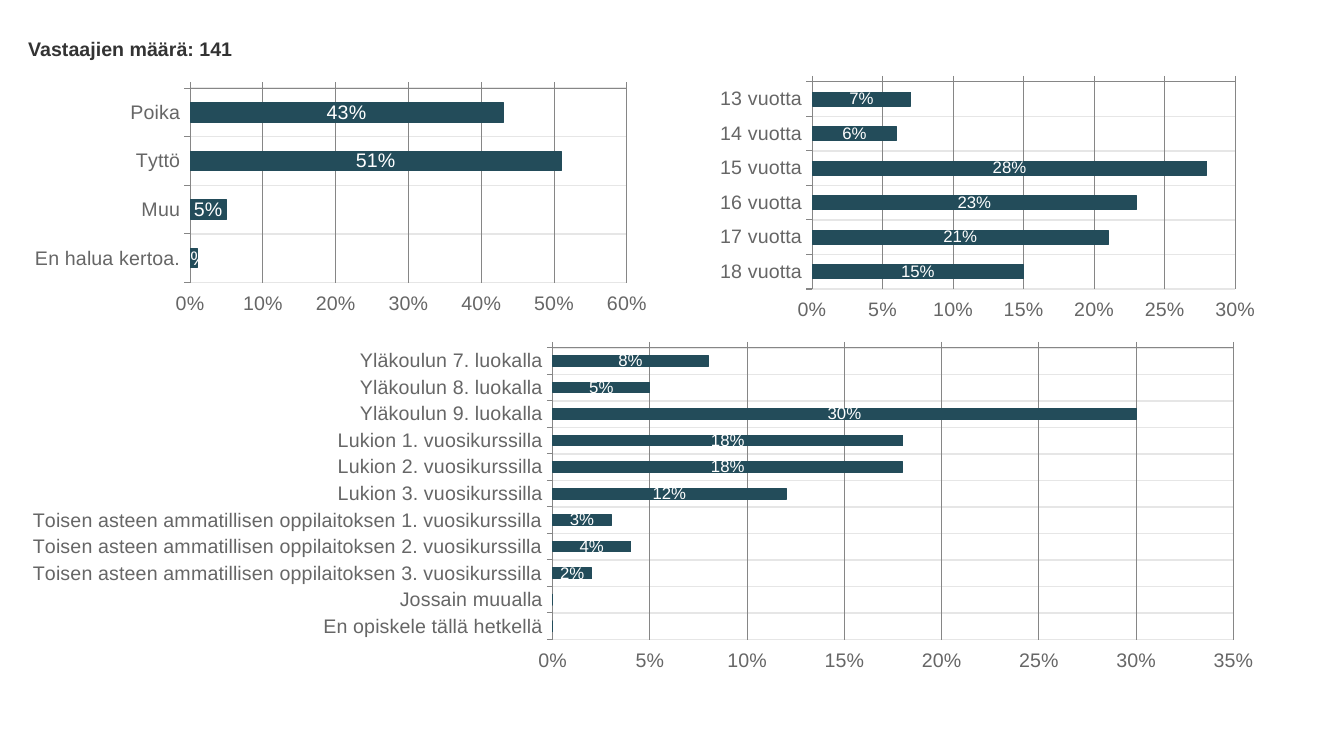
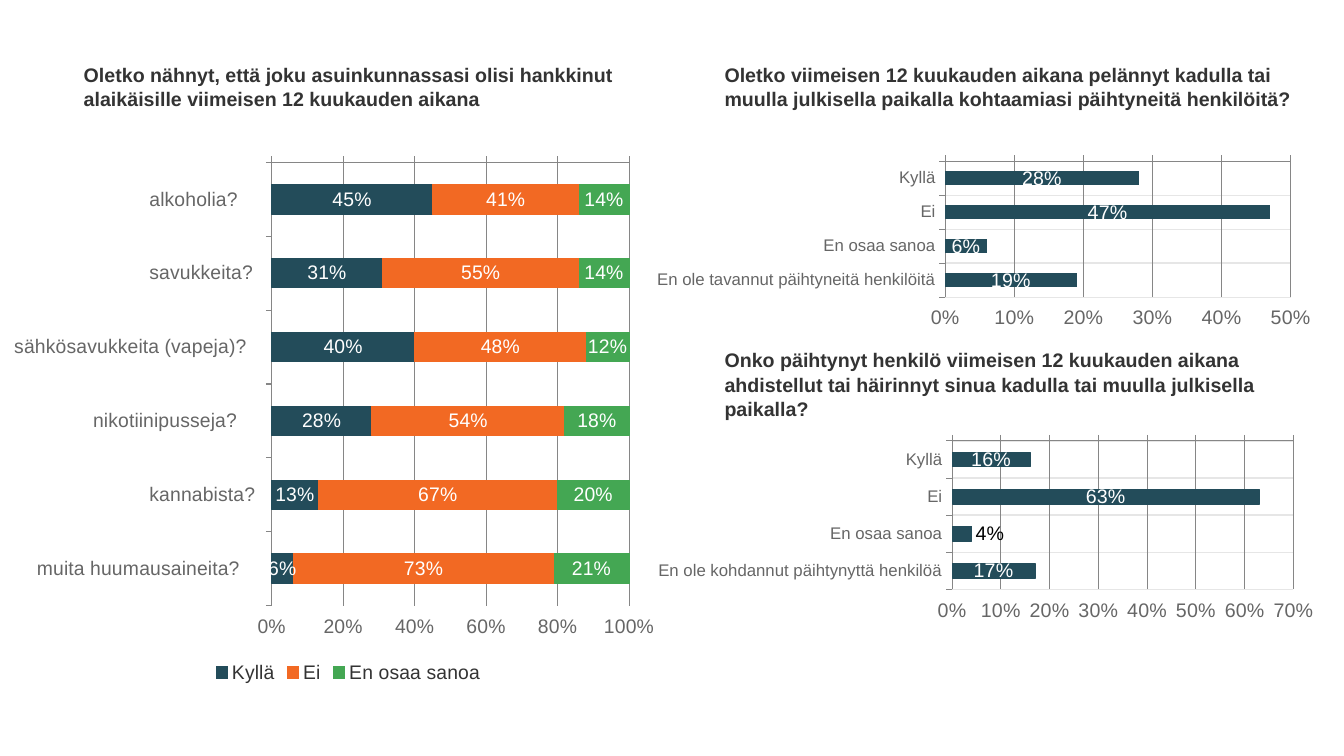
import lxml.etree
import pptx
import pptx.chart.data
import pptx.dml.color
import pptx.enum.chart
import pptx.enum.text
import pptx.oxml.ns
import pptx.util

Cm, Pt = pptx.util.Cm, pptx.util.Pt
KIND = pptx.enum.chart.XL_CHART_TYPE
TICK = pptx.enum.chart.XL_TICK_LABEL_POSITION
SPOT = pptx.enum.chart.XL_LABEL_POSITION

# Shared look
FONT = "Arial"
DARK, GREY = "333333", "666666"
RULE, PALE = "868686", "E6E6E6"
FILLS = ["234C5A", "F26923", "44A753"]


def paint(text):
    return pptx.dml.color.RGBColor.from_string(text)


def style(font, size, color, bold=False):
    font.name, font.size, font.bold = FONT, Pt(size), bold
    font.color.rgb = paint(color)


def stroke(line, color, width=0.75):
    line.color.rgb = paint(color)
    line.width = Pt(width)


def head(slide, box, text):
    """Bold heading; the first one on a slide takes the title placeholder."""
    title = slide.shapes.title
    lengths = [Cm(n) for n in box]
    if title.has_text_frame and not title.text_frame.text:
        shape = title
        shape.left, shape.top, shape.width, shape.height = lengths
    else:
        shape = slide.shapes.add_textbox(*lengths)
    frame = shape.text_frame
    frame.text = text
    frame.word_wrap = True
    frame.auto_size = pptx.enum.text.MSO_AUTO_SIZE.NONE
    frame.vertical_anchor = pptx.enum.text.MSO_ANCHOR.TOP
    frame.margin_left = frame.margin_right = 0
    frame.margin_top = frame.margin_bottom = 0
    para = frame.paragraphs[0]
    para.alignment = pptx.enum.text.PP_ALIGN.LEFT
    para.line_spacing = 1.05
    style(para.runs[0].font, 14, DARK, True)


def place(chart, plot):
    """Fix the inner plot area as shares of the chart: x, y, w, h."""
    qn = pptx.oxml.ns.qn
    area = chart._chartSpace.find(".//" + qn("c:plotArea"))
    for old in area.findall(qn("c:layout")):
        area.remove(old)
    layout = lxml.etree.Element(qn("c:layout"))
    area.insert(0, layout)
    manual = lxml.etree.SubElement(layout, qn("c:manualLayout"))
    parts = [("layoutTarget", "inner"), ("xMode", "edge"), ("yMode", "edge")]
    for tag, value in parts + list(zip("xywh", plot)):
        lxml.etree.SubElement(manual, qn("c:" + tag)).set("val", str(value))


def bars(slide, box, plot, cats, rows, top, step, size=14, label=14):
    """Horizontal bars; several rows are stacked and get a legend."""
    stacked = len(rows) > 1
    data = pptx.chart.data.CategoryChartData(number_format="0%")
    data.categories = cats
    for name, vals in rows.items():
        data.add_series(name, [n / 100 for n in vals])
    kind = KIND.BAR_STACKED if stacked else KIND.BAR_CLUSTERED
    chart = slide.shapes.add_chart(kind, *[Cm(n) for n in box], data).chart
    style(chart.font, 14, DARK)
    chart.has_title = False
    place(chart, plot)

    # Axes: first category on top, percentages along the bottom
    cat, val = chart.category_axis, chart.value_axis
    cat.reverse_order = True
    cat.tick_label_position = TICK.LOW
    val.tick_label_position = TICK.HIGH
    val.minimum_scale, val.maximum_scale, val.major_unit = 0, top, step
    val.tick_labels.number_format = "0%"
    val.tick_labels.number_format_is_linked = False
    for axis, points in ((cat, size), (val, 14)):
        axis.major_tick_mark = pptx.enum.chart.XL_TICK_MARK.OUTSIDE
        style(axis.tick_labels.font, points, GREY)
        stroke(axis.format.line, RULE)
    val.has_major_gridlines = True
    stroke(val.major_gridlines.format.line, RULE)
    cat.has_major_gridlines = not stacked
    if not stacked:
        stroke(cat.major_gridlines.format.line, PALE, 1)

    # Bars and their labels; zeros stay unlabelled
    group = chart.plots[0]
    group.gap_width = 150
    group.vary_by_categories = False
    for row, fill in zip(group.series, FILLS):
        row.format.fill.solid()
        row.format.fill.fore_color.rgb = paint(fill)
        stroke(row.format.line, fill)
        tags = row.data_labels
        tags.show_value = True
        tags.number_format = "0%;;"
        tags.number_format_is_linked = False
        tags.position = SPOT.CENTER
        style(tags.font, label, "FFFFFF")

    chart.has_legend = stacked
    if stacked:
        chart.legend.position = pptx.enum.chart.XL_LEGEND_POSITION.BOTTOM
        chart.legend.include_in_layout = False
        style(chart.legend.font, 14, DARK)
    return chart


def people(slide):
    """Respondents by gender, age and school year."""
    head(slide, (0.71, 0.91, 32.46, 0.58), "Vastaajien määrä: 141")
    bars(slide, (0.53, 1.73, 16.21, 6.3), (0.263, 0.078, 0.679, 0.778),
         ["Poika", "Tyttö", "Muu", "En halua kertoa."],
         {"Series 1": [43, 51, 5, 1]}, 0.6, 0.1)
    bars(slide, (17.15, 1.9, 14.81, 6.3), (0.224, 0.022, 0.72, 0.832),
         [f"{age} vuotta" for age in range(13, 19)],
         {"Series 1": [7, 6, 28, 23, 21, 15]}, 0.3, 0.05, label=12)
    years = range(1, 4)
    trade = "Toisen asteen ammatillisen oppilaitoksen"
    grades = ([f"Yläkoulun {n}. luokalla" for n in range(7, 10)]
              + [f"Lukion {n}. vuosikurssilla" for n in years]
              + [f"{trade} {n}. vuosikurssilla" for n in years]
              + ["Jossain muualla", "En opiskele tällä hetkellä"])
    bars(slide, (0.64, 8.41, 31.42, 8.71), (0.423, 0.041, 0.546, 0.844),
         grades, {"Series 1": [8, 5, 30, 18, 18, 12, 3, 4, 2, 0, 0]},
         0.35, 0.05, label=12)


def street(slide):
    """Supply to minors on the left, street safety on the right."""
    head(slide, (2.11, 1.55, 15.32, 1.19),
         "Oletko nähnyt, että joku asuinkunnassasi olisi hankkinut "
         "alaikäisille viimeisen 12 kuukauden aikana")
    goods = ["alkoholia", "savukkeita", "sähkösavukkeita (vapeja)",
             "nikotiinipusseja", "kannabista", "muita huumausaineita"]
    bars(slide, (0.36, 3.71, 16.59, 13.61), (0.382, 0.028, 0.551, 0.821),
         [f"{item}?\t" for item in goods],
         {"Kyllä": [45, 31, 40, 28, 13, 6],
          "Ei": [41, 55, 48, 54, 67, 73],
          "En osaa sanoa": [14, 14, 12, 18, 20, 21]}, 1, 0.2)

    replies = ["Kyllä", "Ei", "En osaa sanoa"]
    head(slide, (18.26, 1.55, 14.96, 1.19),
         "Oletko viimeisen 12 kuukauden aikana pelännyt kadulla tai "
         "muulla julkisella paikalla kohtaamiasi päihtyneitä henkilöitä?")
    bars(slide, (16.05, 3.71, 17.2, 4.9), (0.452, 0.072, 0.506, 0.7),
         replies + ["En ole tavannut päihtyneitä henkilöitä"],
         {"Series 1": [28, 47, 6, 19]}, 0.5, 0.1, size=12)
    head(slide, (18.26, 8.74, 14.96, 1.8),
         "Onko päihtynyt henkilö viimeisen 12 kuukauden aikana ahdistellut "
         "tai häirinnyt sinua kadulla tai muulla julkisella paikalla?")
    chart = bars(slide, (15.8, 10.69, 17.7, 5.21),
                 (0.463, 0.081, 0.486, 0.718),
                 replies + ["En ole kohdannut päihtynyttä henkilöä"],
                 {"Series 1": [16, 63, 4, 17]}, 0.7, 0.1, size=12)
    # The short bar carries its label outside
    tag = chart.plots[0].series[0].points[2].data_label
    style(tag.font, 14, "000000")
    tag.position = SPOT.OUTSIDE_END


def main():
    deck = pptx.Presentation()
    deck.slide_width, deck.slide_height = Cm(33.87), Cm(19.05)
    for build in (people, street):
        build(deck.slides.add_slide(deck.slide_layouts[5]))
    deck.save("out.pptx")


if __name__ == "__main__":
    main()
